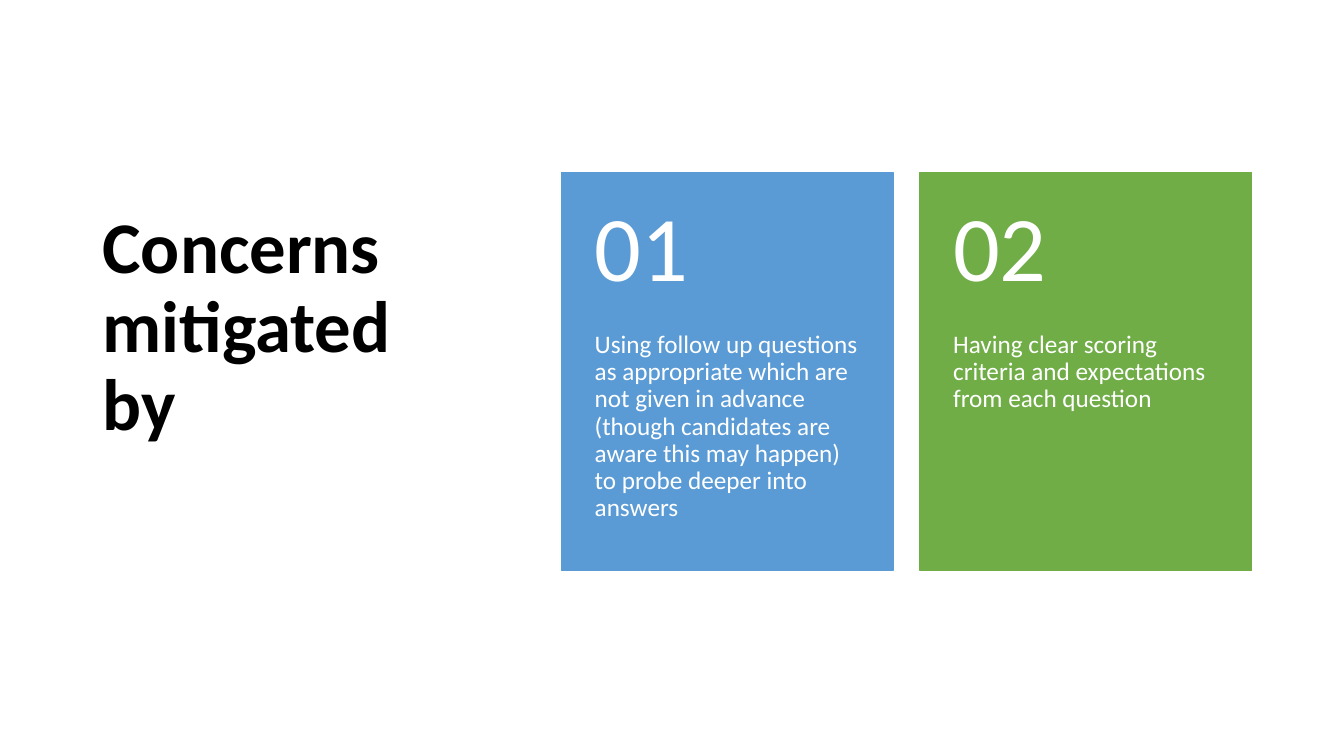
from pptx import Presentation
from pptx import util as u
from pptx.dml.color import RGBColor
from pptx.enum import shapes, text

# Content
HEADING = "Concerns mitigated by"
CARDS = [
    ("01", "Using follow up questions as appropriate which are not given in advance "
           "(though candidates are aware this may happen) to probe deeper into answers",
     "5B9BD5"),
    ("02", "Having clear scoring criteria and expectations from each question", "70AD47"),
]

# Layout in points
CARDS_LEFT, CARDS_TOP = 401, 123.1
CARD_WIDTH, CARD_HEIGHT = 237, 284.4
CARD_STEP = 256
NUMBER_HEIGHT = CARD_HEIGHT * 0.4
SIDE_INSET = 23.8


def color(hex_string):
    return RGBColor.from_string(hex_string)


def box(*lengths):
    return [u.Pt(length) for length in lengths]


def write(frame, words, size, hex_string, anchor, insets, bold=False, after=0):
    frame.word_wrap = True
    frame.auto_size = text.MSO_AUTO_SIZE.NONE
    frame.vertical_anchor = anchor
    (frame.margin_left, frame.margin_top,
     frame.margin_right, frame.margin_bottom) = box(*insets)
    paragraph = frame.paragraphs[0]
    paragraph.alignment = text.PP_ALIGN.LEFT
    paragraph.line_spacing = 0.9
    paragraph.space_before = u.Pt(0)
    paragraph.space_after = u.Pt(after)
    run = paragraph.add_run()
    run.text = words
    run.font.name = "Calibri"
    run.font.size = u.Pt(size)
    run.font.bold = bold
    run.font.color.rgb = color(hex_string)


deck = Presentation()
deck.slide_width, deck.slide_height = box(960, 540)
slide = deck.slides.add_slide(deck.slide_layouts[5])

# Heading, raised by half a line through its bottom inset
heading = slide.shapes.title
heading.left, heading.top, heading.width, heading.height = box(66, 44, 266, 438.5)
write(heading.text_frame, HEADING, 52, "000000", text.MSO_ANCHOR.MIDDLE,
      (7.2, 3.6, 7.2, 60.7), bold=True)

# Numbered cards
for index, (number, measure, fill) in enumerate(CARDS):
    left = CARDS_LEFT + index * CARD_STEP
    card = slide.shapes.add_shape(
        shapes.MSO_SHAPE.RECTANGLE, *box(left, CARDS_TOP, CARD_WIDTH, CARD_HEIGHT))
    card.shadow.inherit = False
    card.fill.solid()
    card.fill.fore_color.rgb = color(fill)
    card.line.color.rgb = color(fill)
    card.line.width = u.Pt(1)

    measure_box = slide.shapes.add_textbox(
        *box(left, CARDS_TOP + NUMBER_HEIGHT, CARD_WIDTH, CARD_HEIGHT - NUMBER_HEIGHT))
    write(measure_box.text_frame, measure, 18, "FFFFFF", text.MSO_ANCHOR.TOP,
          (SIDE_INSET, 0, SIDE_INSET, 26), after=6.3)

    number_box = slide.shapes.add_textbox(
        *box(left, CARDS_TOP, CARD_WIDTH, NUMBER_HEIGHT))
    write(number_box.text_frame, number, 66, "FFFFFF", text.MSO_ANCHOR.MIDDLE,
          (SIDE_INSET, 13, SIDE_INSET, 13))

deck.save("out.pptx")
